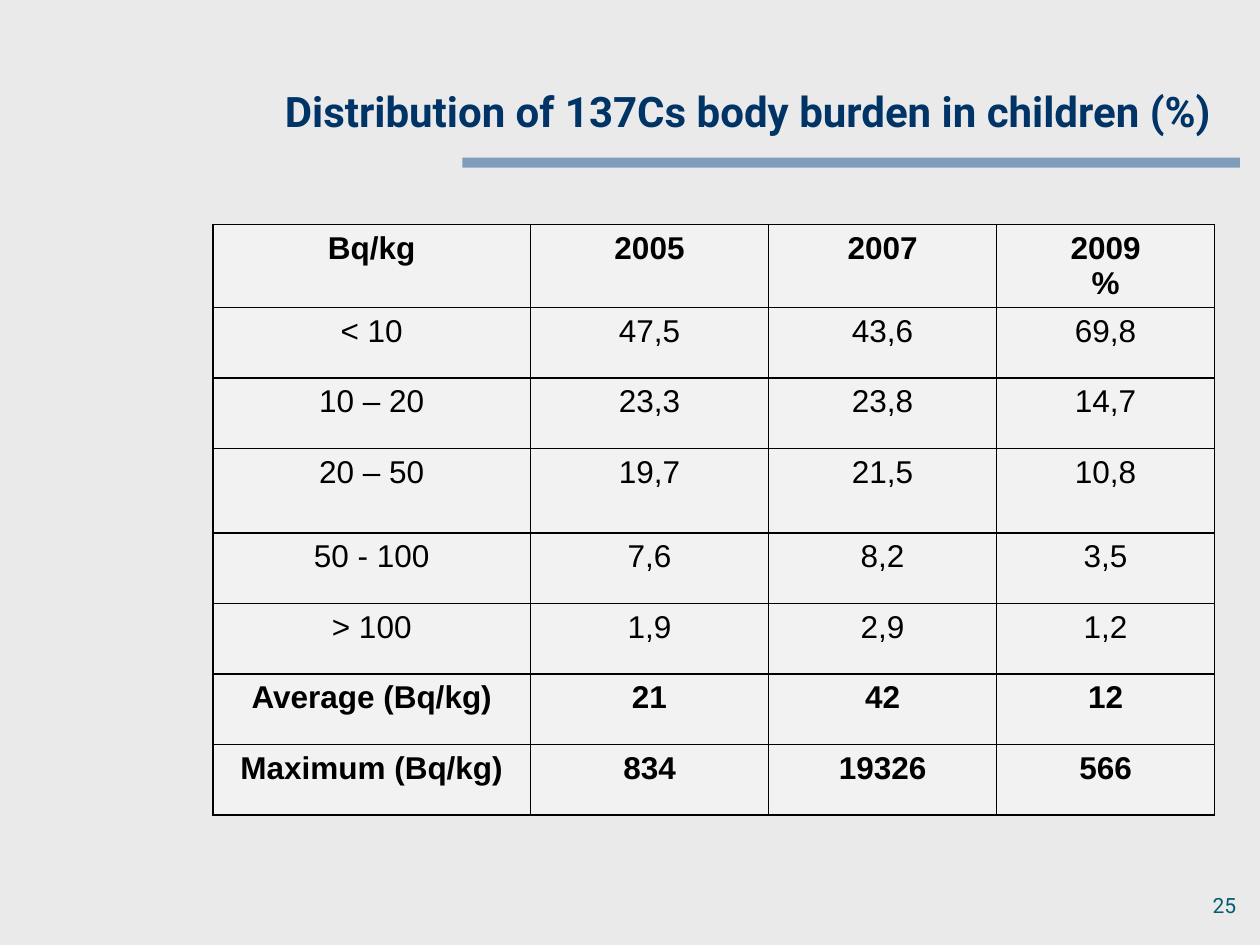
from lxml.etree import SubElement
from pptx import Presentation
from pptx.dml.color import RGBColor
from pptx.enum.shapes import MSO_SHAPE as Shape
from pptx.enum.text import MSO_ANCHOR as Anchor, PP_ALIGN as Align
from pptx.oxml import parse_xml
from pptx.oxml.ns import nsdecls, qn
from pptx.util import Inches, Pt

BACKGROUND = RGBColor(0xEA, 0xEA, 0xEA)
BAR = RGBColor(0x33, 0x66, 0x99)
NAVY = RGBColor(0x00, 0x33, 0x66)
TEAL = RGBColor(0x04, 0x5C, 0x75)
BLACK = RGBColor(0x00, 0x00, 0x00)
CELL = RGBColor(0xF2, 0xF2, 0xF2)

TITLE = "Distribution of 137Cs body burden in children (%)"
PAGE_NUMBER = "25"
ROWS = [
    ("Bq/kg", "2005", "2007", "2009\n%"),
    ("< 10", "47,5", "43,6", "69,8"),
    ("10 – 20", "23,3", "23,8", "14,7"),
    ("20 – 50", "19,7", "21,5", "10,8"),
    ("50 - 100", "7,6", "8,2", "3,5"),
    ("> 100", "1,9", "2,9", "1,2"),
    ("Average (Bq/kg)", "21", "42", "12"),
    ("Maximum (Bq/kg)", "834", "19326", "566"),
]
BOLD_ROWS = {0, 6, 7}
COLUMN_WIDTHS = [2.52, 1.89, 1.81, 1.73]
ROW_HEIGHTS = [0.66, 0.56, 0.56, 0.67, 0.56, 0.56, 0.56, 0.56]


def write(frame, text, size=18, font="Arial", color=BLACK, bold=False,
          align=Align.CENTER, anchor=Anchor.TOP):
    frame.word_wrap = True
    frame.vertical_anchor = anchor
    frame.text = text
    for paragraph in frame.paragraphs:
        paragraph.alignment = align
        paragraph.font.size = Pt(size)
        paragraph.font.name = font
        paragraph.font.bold = bold
        paragraph.font.color.rgb = color


def add_borders(cell):
    properties = cell._tc.get_or_add_tcPr()
    for index, side in enumerate(("lnL", "lnR", "lnT", "lnB")):
        properties.insert(index, parse_xml(
            f'<a:{side} {nsdecls("a")} w="{Pt(1)}"><a:solidFill>'
            f'<a:srgbClr val="{BLACK}"/></a:solidFill></a:{side}>'))


def place(shape, left, top, width, height):
    shape.left, shape.top = Inches(left), Inches(top)
    shape.width, shape.height = Inches(width), Inches(height)


def add_bar(slide):
    bar = slide.shapes.add_shape(Shape.RECTANGLE, Inches(3.67), Inches(1.25),
                                 Inches(6.17), Inches(0.08))
    bar.shadow.inherit = False
    bar.line.fill.background()
    bar.fill.solid()
    bar.fill.fore_color.rgb = BAR
    color = bar._element.spPr.find(qn("a:solidFill"))[0]
    SubElement(color, qn("a:alpha"), val="58000")


def add_burden_table(slide):
    table = slide.shapes.add_table(
        len(ROWS), len(COLUMN_WIDTHS), Inches(1.69), Inches(1.78),
        Inches(sum(COLUMN_WIDTHS)), Inches(sum(ROW_HEIGHTS))).table
    for column, width in zip(table.columns, COLUMN_WIDTHS):
        column.width = Inches(width)
    for row_index, (values, height) in enumerate(zip(ROWS, ROW_HEIGHTS)):
        table.rows[row_index].height = Inches(height)
        for column_index, value in enumerate(values):
            cell = table.cell(row_index, column_index)
            write(cell.text_frame, value, bold=row_index in BOLD_ROWS)
            cell.fill.solid()
            cell.fill.fore_color.rgb = CELL
            add_borders(cell)


def main():
    presentation = Presentation()
    presentation.slide_width = Inches(10)
    presentation.slide_height = Inches(7.5)
    slide = presentation.slides.add_slide(presentation.slide_layouts[5])
    slide.background.fill.solid()
    slide.background.fill.fore_color.rgb = BACKGROUND

    title = slide.shapes.title
    place(title, 0.17, 0.42, 9.64, 0.92)
    write(title.text_frame, TITLE, size=24, font="Roboto", color=NAVY,
          bold=True, align=Align.RIGHT, anchor=Anchor.MIDDLE)
    title.text_frame.margin_right = Inches(0.2)

    add_bar(slide)
    add_burden_table(slide)

    number = slide.shapes.add_textbox(Inches(7.83), Inches(6.83),
                                      Inches(2.08), Inches(0.5))
    write(number.text_frame, PAGE_NUMBER, size=12, font="Roboto", color=TEAL,
          align=Align.RIGHT, anchor=Anchor.BOTTOM)
    presentation.save("out.pptx")


if __name__ == "__main__":
    main()
